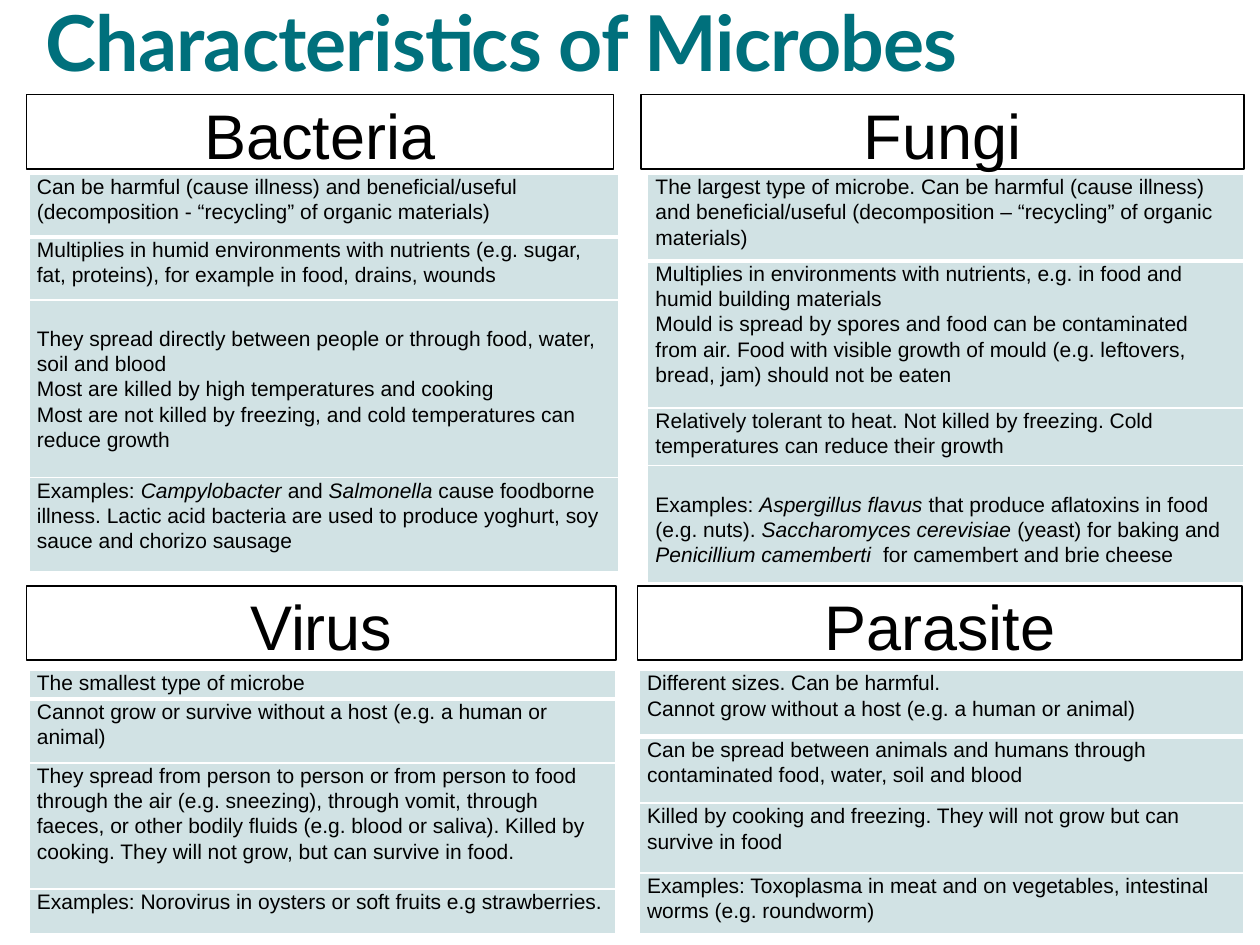
import pptx
import pptx.util
import pptx.dml.color
import pptx.enum.shapes
import pptx.enum.text
import pptx.oxml
import pptx.oxml.ns

Pt = pptx.util.Pt
COLORS = {"title": "00707C", "text": "000000", "cell": "D1E2E4", "white": "FFFFFF"}
LINE_SPACING = 1.07
HEADING_HEIGHT = 42.5
BLANK_LINE = 14.8
TOP_ROW = {"heading": 54, "table": 99.4}
BOTTOM_ROW = {"heading": 334.8, "table": 383}

MICROBES = [
    {
        "name": "Bacteria", "tops": TOP_ROW,
        "heading": (15.1, 335.5), "table": (16.6, 337),
        "rows": [
            (36, 0, "Can be harmful (cause illness) and beneficial/useful (decomposition - “recycling” of organic materials)"),
            (36, 0, "Multiplies in humid environments with nutrients (e.g. sugar, fat, proteins), for example in food, drains, wounds"),
            (101.5, BLANK_LINE, "They spread directly between people or through food, water, soil and blood\n"
             "Most are killed by high temperatures and cooking\n"
             "Most are not killed by freezing, and cold temperatures can reduce growth"),
            (54, 0, "Examples: *Campylobacter* and *Salmonella* cause foodborne illness. "
             "Lactic acid bacteria are used to produce yoghurt, soy sauce and chorizo sausage"),
        ],
    },
    {
        "name": "Fungi", "tops": TOP_ROW,
        "heading": (366.5, 344.2), "table": (370.1, 340.6),
        "rows": [
            (49.7, 0, "The largest type of microbe. Can be harmful (cause illness) and beneficial/useful "
             "(decomposition – “recycling” of organic materials)"),
            (84, 0, "Multiplies in environments with nutrients, e.g. in food and humid building materials\n"
             "Mould is spread by spores and food can be contaminated from air. "
             "Food with visible growth of mould (e.g. leftovers, bread, jam) should not be eaten"),
            (33, 0, "Relatively tolerant to heat. Not killed by freezing. Cold temperatures can reduce their growth"),
            (66.8, BLANK_LINE, "Examples: *Aspergillus flavus *that produce aflatoxins in food (e.g. nuts). "
             "*Saccharomyces cerevisiae *(yeast) for baking and *Penicillium camemberti  *for camembert and brie cheese"),
        ],
    },
    {
        "name": "Virus", "tops": BOTTOM_ROW,
        "heading": (15.1, 337), "table": (16.6, 335.5),
        "rows": [
            (16.5, 0, "The smallest type of microbe"),
            (36.5, 0, "Cannot grow or survive without a host (e.g. a human or animal)"),
            (72, 0, "They spread from person to person or from person to food through the air (e.g. sneezing), "
             "through vomit, through faeces, or other bodily fluids (e.g. blood or saliva). "
             "Killed by cooking. They will not grow, but can survive in food."),
            (25.5, 0, "Examples: Norovirus in oysters or soft fruits e.g strawberries."),
        ],
    },
    {
        "name": "Parasite", "tops": BOTTOM_ROW,
        "heading": (364.3, 345.6), "table": (365.3, 345.6),
        "rows": [
            (38, 0, "Different sizes. Can be harmful.\nCannot grow without a host (e.g. a human or animal)"),
            (38, 0, "Can be spread between animals and humans through contaminated food, water, soil and blood"),
            (39.8, 0, "Killed by cooking and freezing. They will not grow but can survive in food"),
            (34.7, 0, "Examples: Toxoplasma in meat and on vegetables, intestinal worms (e.g. roundworm)"),
        ],
    },
]


def color(name):
    return pptx.dml.color.RGBColor.from_string(COLORS[name])


def add_span(para, text, size, font="Arial", ink="text", bold=False, italic=False):
    span = para.add_run()
    span.text = text
    span.font.name = font
    span.font.size = Pt(size)
    span.font.bold = bold
    span.font.italic = italic
    span.font.color.rgb = color(ink)
    return span


def fill_title(page, text):
    title = page.shapes.title
    title.left, title.top, title.width, title.height = Pt(16.6), Pt(-5), Pt(620.6), Pt(104.4)
    frame = title.text_frame
    frame.auto_size = pptx.enum.text.MSO_AUTO_SIZE.NONE
    frame.vertical_anchor = pptx.enum.text.MSO_ANCHOR.TOP
    frame.margin_left, frame.margin_top = Pt(9.4), Pt(8)
    frame.margin_right = frame.margin_bottom = 0
    para = frame.paragraphs[0]
    para.alignment = pptx.enum.text.PP_ALIGN.LEFT
    para.line_spacing = 0.9
    para.space_before = Pt(0)
    para.space_after = Pt(6)
    span = add_span(para, text, 44, "Lato", "title", bold=True)
    span.font._element.set("spc", "-50")


def add_heading(page, text, left, top, width):
    box = page.shapes.add_shape(pptx.enum.shapes.MSO_SHAPE.RECTANGLE,
                                Pt(left), Pt(top), Pt(width), Pt(HEADING_HEIGHT))
    box.shadow.inherit = False
    box.fill.solid()
    box.fill.fore_color.rgb = color("white")
    box.line.color.rgb = color("text")
    box.line.width = Pt(1)
    box.text_frame.word_wrap = True
    box.text_frame.vertical_anchor = pptx.enum.text.MSO_ANCHOR.MIDDLE
    para = box.text_frame.paragraphs[0]
    para.alignment = pptx.enum.text.PP_ALIGN.CENTER
    para.line_spacing = LINE_SPACING
    para.space_after = Pt(8)
    add_span(para, text, 36)


def set_borders(cell, widths):
    properties = cell._tc.get_or_add_tcPr()
    for index, (side, width) in enumerate(widths.items()):
        border = pptx.oxml.parse_xml(
            f'<a:{side} {pptx.oxml.ns.nsdecls("a")} w="{Pt(width)}"><a:solidFill>'
            f'<a:srgbClr val="{COLORS["white"]}"/></a:solidFill></a:{side}>')
        properties.insert(index, border)


def fill_cell(cell, text, top_margin, borders):
    cell.fill.solid()
    cell.fill.fore_color.rgb = color("cell")
    cell.margin_left = cell.margin_right = Pt(4.5)
    cell.margin_top, cell.margin_bottom = Pt(top_margin), 0
    set_borders(cell, borders)
    frame = cell.text_frame
    for index, line in enumerate(text.split("\n")):
        para = frame.add_paragraph() if index else frame.paragraphs[0]
        para.line_spacing = LINE_SPACING
        for part, words in enumerate(line.split("*")):
            if words:
                add_span(para, words, 12, italic=part % 2 == 1)


def add_facts(page, rows, left, top, width):
    total = sum(height for height, _, _ in rows)
    table = page.shapes.add_table(len(rows), 1, Pt(left), Pt(top), Pt(width), Pt(total)).table
    table.first_row = False
    table.horz_banding = False
    for index, (height, top_margin, text) in enumerate(rows):
        table.rows[index].height = Pt(height)
        borders = {"lnL": 1, "lnR": 1, "lnT": 3 if index == 1 else 1, "lnB": 1 if index else 3}
        fill_cell(table.cell(index, 0), text, top_margin, borders)


def main():
    deck = pptx.Presentation()
    deck.slide_width, deck.slide_height = Pt(720), Pt(540)
    page = deck.slides.add_slide(deck.slide_layouts.get_by_name("Title Only"))
    fill_title(page, "Characteristics of Microbes")
    for microbe in MICROBES:
        tops = microbe["tops"]
        left, width = microbe["heading"]
        add_heading(page, microbe["name"], left, tops["heading"], width)
        left, width = microbe["table"]
        add_facts(page, microbe["rows"], left, tops["table"], width)
    deck.save("out.pptx")


if __name__ == "__main__":
    main()
